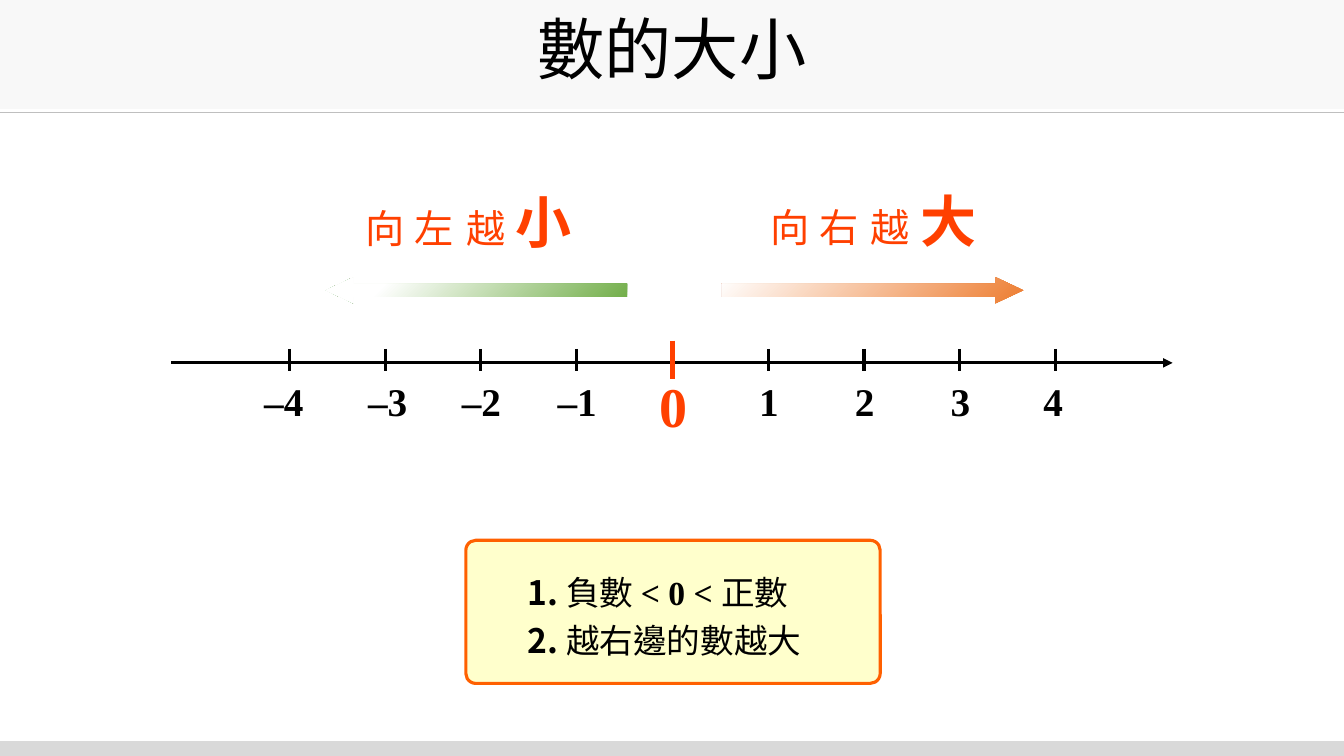
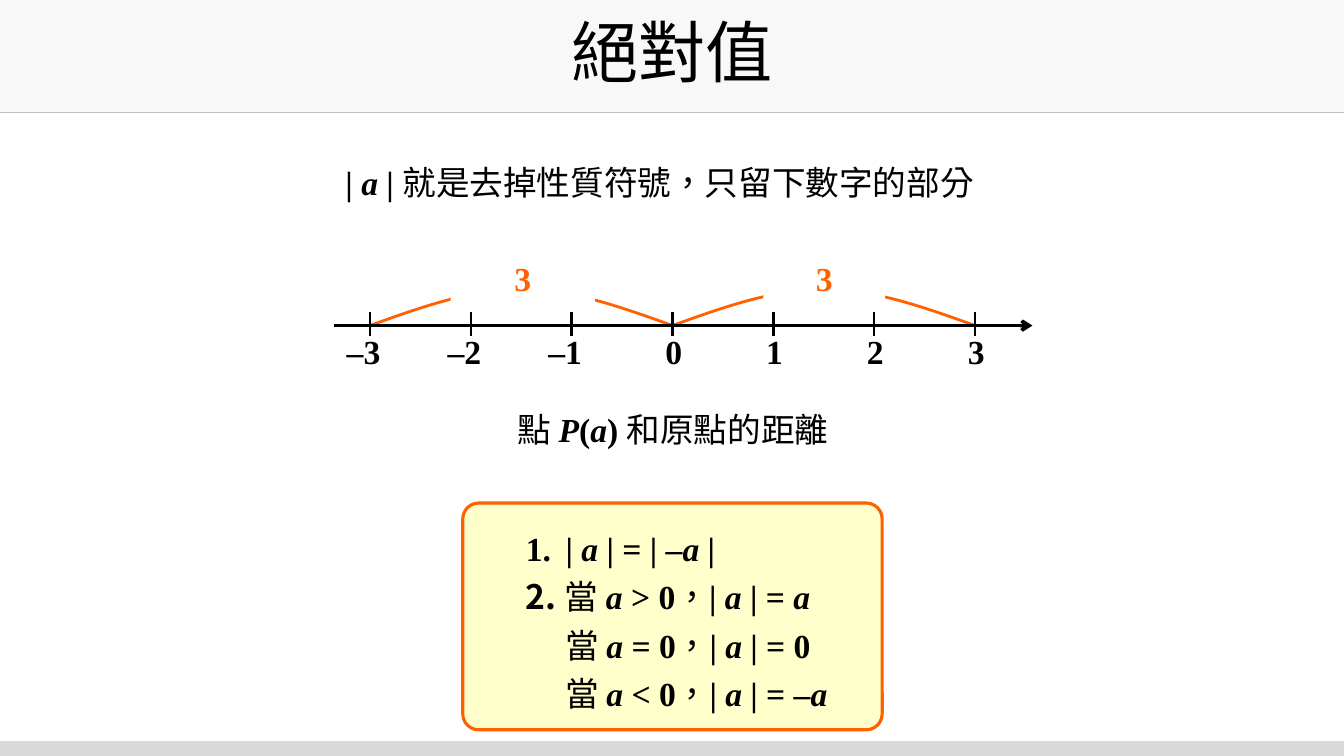
from lxml.etree import SubElement as Sub
from pptx import Presentation
from pptx.dml.color import RGBColor
from pptx.enum.shapes import MSO_CONNECTOR as Conn, MSO_SHAPE as Kind
from pptx.enum.text import MSO_ANCHOR as Anchor, MSO_AUTO_SIZE as Auto, PP_ALIGN as Align
from pptx.oxml import parse_xml
from pptx.oxml.ns import nsdecls, qn
from pptx.util import Inches, Pt

BLACK = RGBColor(0x00, 0x00, 0x00)
WHITE = RGBColor(0xFF, 0xFF, 0xFF)
PALE = RGBColor(0xF8, 0xF8, 0xF8)
GREY = RGBColor(0xD9, 0xD9, 0xD9)
RULE = RGBColor(0xBF, 0xBF, 0xBF)
RED = RGBColor(0xFF, 0x40, 0x00)
ORANGE = RGBColor(0xFF, 0x60, 0x00)
CREAM = RGBColor(0xFF, 0xFF, 0xCC)
AMBER = RGBColor(0xED, 0x7D, 0x31)
GREEN = RGBColor(0x70, 0xAD, 0x47)
SANS = "Noto Sans CJK SC"
SERIF = "Times New Roman"
WIDE, HIGH = 13.33, 7.5
MID = 6.67


def put(item, **form):
    for key, value in form.items():
        setattr(item, key, value)


def box(*sides):
    return [Inches(side) for side in sides]


def digit(num):
    return str(num).replace("-", "–")


class Deck:
    def __init__(self):
        self.prs = Presentation()
        put(self.prs, slide_width=Inches(WIDE), slide_height=Inches(HIGH))
        self.plan = self.prs.slide_layouts[5]
        self.slide = None

    def page(self, text, top, high):
        self.slide = self.prs.slides.add_slide(self.plan)
        title = self.slide.shapes.title
        left, top, wide, high = box(0, top, WIDE, high)
        put(title, left=left, top=top, width=wide, height=high)
        self.paint(title, PALE)
        put(title.text_frame, auto_size=Auto.NONE, vertical_anchor=Anchor.MIDDLE, word_wrap=True)
        self.say(title, [[(text, "")]], size=48, font=SANS, align=Align.CENTER, gap=0.9)

    def frame(self):
        bar = self.shape(Kind.RECTANGLE, (0, 7.36, WIDE, 0.14), GREY, GREY, 1)
        rule = self.line((0, 1.11), (WIDE, 1.11), RULE, 0.5)
        for part in (bar, rule):
            self.plan.element.cSld.spTree.append(part.element)

    def paint(self, shape, fill=None, line=None, weight=1):
        if fill is None:
            shape.fill.background()
        else:
            shape.fill.solid()
            shape.fill.fore_color.rgb = fill
        if line is None:
            shape.line.fill.background()
        else:
            shape.line.color.rgb = line
            shape.line.width = Pt(weight)

    def shape(self, kind, area, fill=None, line=None, weight=1):
        shape = self.slide.shapes.add_shape(kind, *box(*area))
        shape.shadow.inherit = False
        self.paint(shape, fill, line, weight)
        return shape

    def line(self, start, end, color, weight, tip=None):
        line = self.slide.shapes.add_connector(Conn.STRAIGHT, *box(*start, *end))
        line.line.color.rgb = color
        line.line.width = Pt(weight)
        props = line.element.spPr
        if tip:
            Sub(props.find(qn("a:ln")), qn("a:tailEnd"), type=tip)
        Sub(props, qn("a:effectLst"))
        return line

    def say(self, shape, paras, size=24, color=BLACK, font=SERIF, align=Align.LEFT, gap=1.0):
        frame = shape.text_frame
        for num, runs in enumerate(paras):
            para = frame.add_paragraph() if num else frame.paragraphs[0]
            put(para, alignment=align, line_spacing=gap)
            for text, style, *rest in runs:
                run = para.add_run()
                run.text = text
                put(run.font, name=font, size=Pt(rest[0] if rest else size),
                    bold="b" in style, italic="i" in style)
                run.font.color.rgb = color
                props = run._r.get_or_add_rPr()
                props.set("lang", "zh-TW")
                Sub(props, qn("a:ea"), typeface=SANS)

    def text(self, area, runs, **form):
        shape = self.slide.shapes.add_textbox(*box(*area))
        put(shape.text_frame, word_wrap=True, auto_size=Auto.SHAPE_TO_FIT_TEXT)
        self.say(shape, [runs], **form)

    def card(self, area, paras, right, count=2):
        card = self.shape(Kind.ROUNDED_RECTANGLE, area, CREAM, ORANGE, 2.25)
        card.adjustments[0] = 0.07
        put(card.text_frame, word_wrap=True, vertical_anchor=Anchor.MIDDLE,
            margin_left=Inches(0.39), margin_right=Inches(right))
        self.say(card, paras, gap=1.2)
        for num, para in enumerate(card.text_frame.paragraphs):
            props = para._p.get_or_add_pPr()
            if num < count:
                props.set("marL", str(Inches(0.5)))
                props.set("indent", str(Inches(-0.31)))
                Sub(props, qn("a:buFont"), typeface="+mj-lt")
                Sub(props, qn("a:buAutoNum"), type="arabicPeriod")
            else:
                props.set("marL", str(Inches(0.58)))
                props.set("indent", "0")

    def arrow(self, left, color, clear, turn=0):
        arrow = self.shape(Kind.RIGHT_ARROW, (left, 2.75, 2.99, 0.26))
        arrow.adjustments[1] = 1.07
        arrow.rotation = turn
        stops = "".join(
            f'<a:gs pos="{pos * 1000}"><a:srgbClr val="{tone}"/></a:gs>'
            for pos, tone in ((0, WHITE), (clear, WHITE), (100, color)))
        fade = parse_xml(
            f'<a:gradFill {nsdecls("a")} rotWithShape="1"><a:gsLst>{stops}</a:gsLst>'
            '<a:path path="circle"><a:fillToRect r="100000" b="100000"/></a:path></a:gradFill>')
        props = arrow.element.spPr
        props.replace(props.find(qn("a:noFill")), fade)

    def trend(self, left, top, side, word):
        runs = [("向", "", 28), (" ", "", 32), (side, "", 28), (" ", "", 40),
                ("越", "", 28), (" ", "", 32), (word, "b", 40)]
        self.text((left, top, 3.34, 0.77), runs, color=RED, font=SANS, align=Align.CENTER)

    def arch(self, left, tag, wide):
        dots = []
        for num in range(41):
            rise = 1 - abs(num / 20 - 1)
            dots.append(box(left + num * 3 / 40, 3.23 - 0.54 * rise + 0.18 * rise ** 3))
        pen = self.slide.shapes.build_freeform(*dots[0])
        pen.add_line_segments(dots[1:], close=False)
        curve = pen.convert_to_shape()
        curve.shadow.inherit = False
        self.paint(curve, None, ORANGE, 2)
        label = self.shape(Kind.RECTANGLE, (tag, 2.51, wide, 0.5), WHITE)
        self.say(label, [[("3", "b")]], color=ORANGE, align=Align.CENTER)


def order(deck):
    deck.page("數的大小", -0.03, 1.11)
    deck.frame()
    deck.line((1.7, 3.6), (11.63, 3.6), BLACK, 2.25, "triangle")
    nudge = {-4: -0.06, -3: 0.02, 4: -0.03}
    for num in range(-4, 5):
        mark = MID + num * 0.95
        if num:
            deck.line((mark, 3.46), (mark, 3.68), BLACK, 2.25)
            deck.text((mark - 0.38 + nudge.get(num, 0), 3.69, 0.77, 0.57),
                      [(digit(num), "b")], size=28, align=Align.CENTER)
        else:
            deck.line((mark, 3.38), (mark, 3.76), RED, 3)
            deck.text((6.4, 3.64, 0.55, 0.77), [("0", "b")],
                      size=40, color=RED, align=Align.CENTER)
    deck.card((4.62, 5.36, 4.11, 1.42), [
        [(" ", "b"), ("負數 ", ""), ("< 0 < ", "b"), ("正數", "")],
        [(" ", "b"), ("越右邊的數越大", "")],
    ], 0.39)
    deck.trend(6.99, 1.8, "右", "大")
    deck.arrow(7.16, AMBER, 0)
    deck.trend(2.98, 1.81, "左", "小")
    deck.arrow(3.23, GREEN, 20, 180)


def size(deck):
    deck.page("絕對值", 0, 1.11)
    deck.text((3.33, 1.48, 6.67, 0.54),
              [("| a | ", "bi"), ("就是去掉性質符號，只留下數字的部分", "")], gap=1.2)

    def case(sign, value):
        return [("當 ", ""), ("a", "bi"), (f" {sign} 0", "b"), ("，", ""),
                ("| ", "b"), ("a", "bi"), (" | = ", "b"), *value]

    deck.card((4.59, 4.99, 4.16, 2.25), [
        [(" | ", "b"), ("a ", "bi"), ("| = | –", "b"), ("a", "bi"), (" |", "b")],
        [(" ", "b"), *case(">", [("a", "bi")])],
        case("=", [("0", "b")]),
        case("<", [("–", "b"), ("a", "bi")]),
    ], 0.1)
    deck.arch(MID - 3, 4.47, 1.43)
    deck.arch(MID, 7.57, 1.21)
    deck.line((3.31, 3.23), (10.24, 3.23), BLACK, 2.5, "arrow")
    for num in range(-3, 4):
        mark = MID + num
        deck.line((mark, 3.1), (mark, 3.33), BLACK, 1.75)
        shift = 0.33 if num < 0 else 0.17
        deck.text((mark - shift, 3.23, 0.58, 0.5), [(digit(num), "b")])
    deck.text((3.34, 3.93, 6.67, 0.54),
              [("點 ", ""), ("P", "bi"), ("(", "b"), ("a", "bi"), (") ", "b"), ("和原點的距離", "")],
              align=Align.CENTER, gap=1.2)


def main():
    deck = Deck()
    order(deck)
    size(deck)
    deck.prs.save("out.pptx")


if __name__ == "__main__":
    main()
